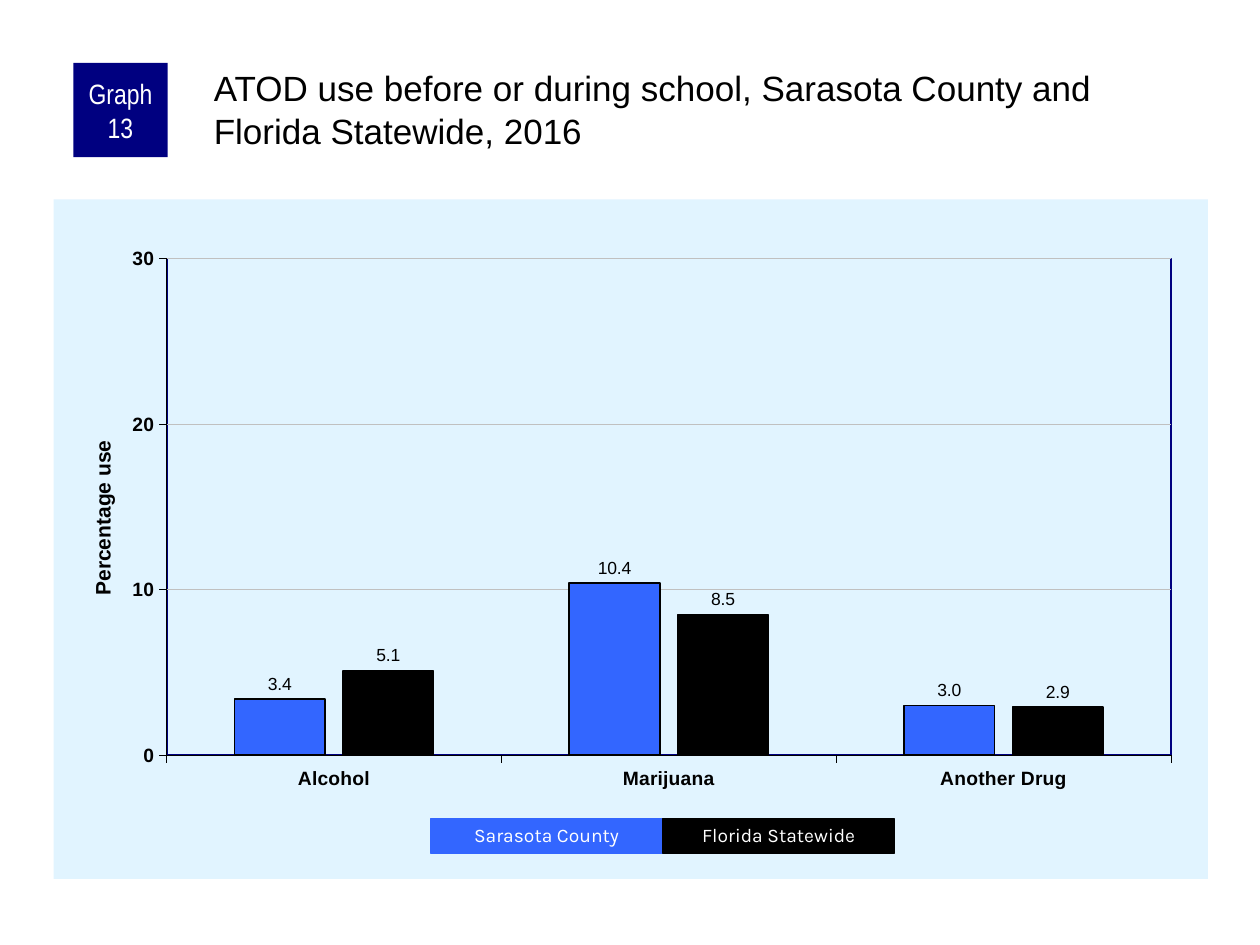
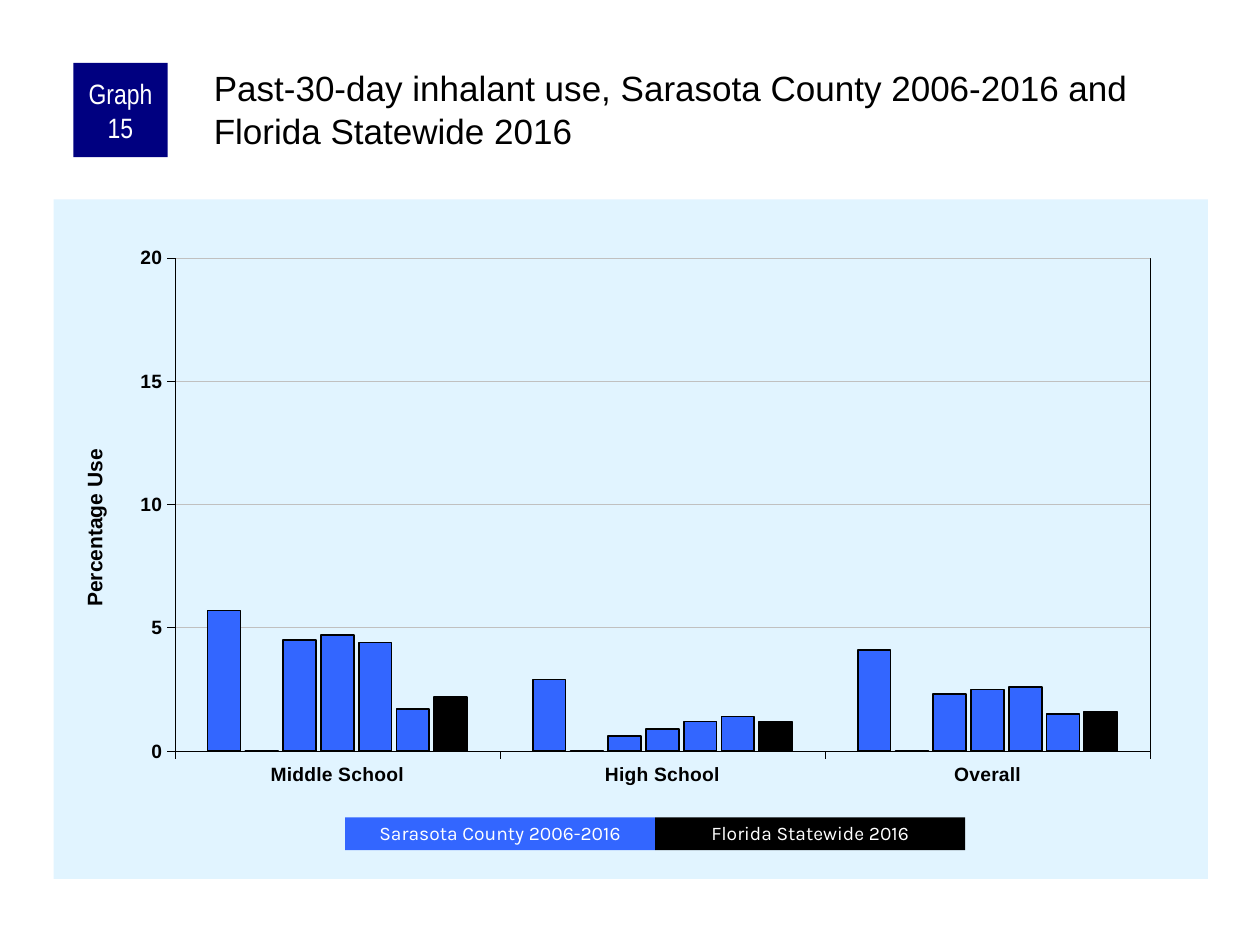
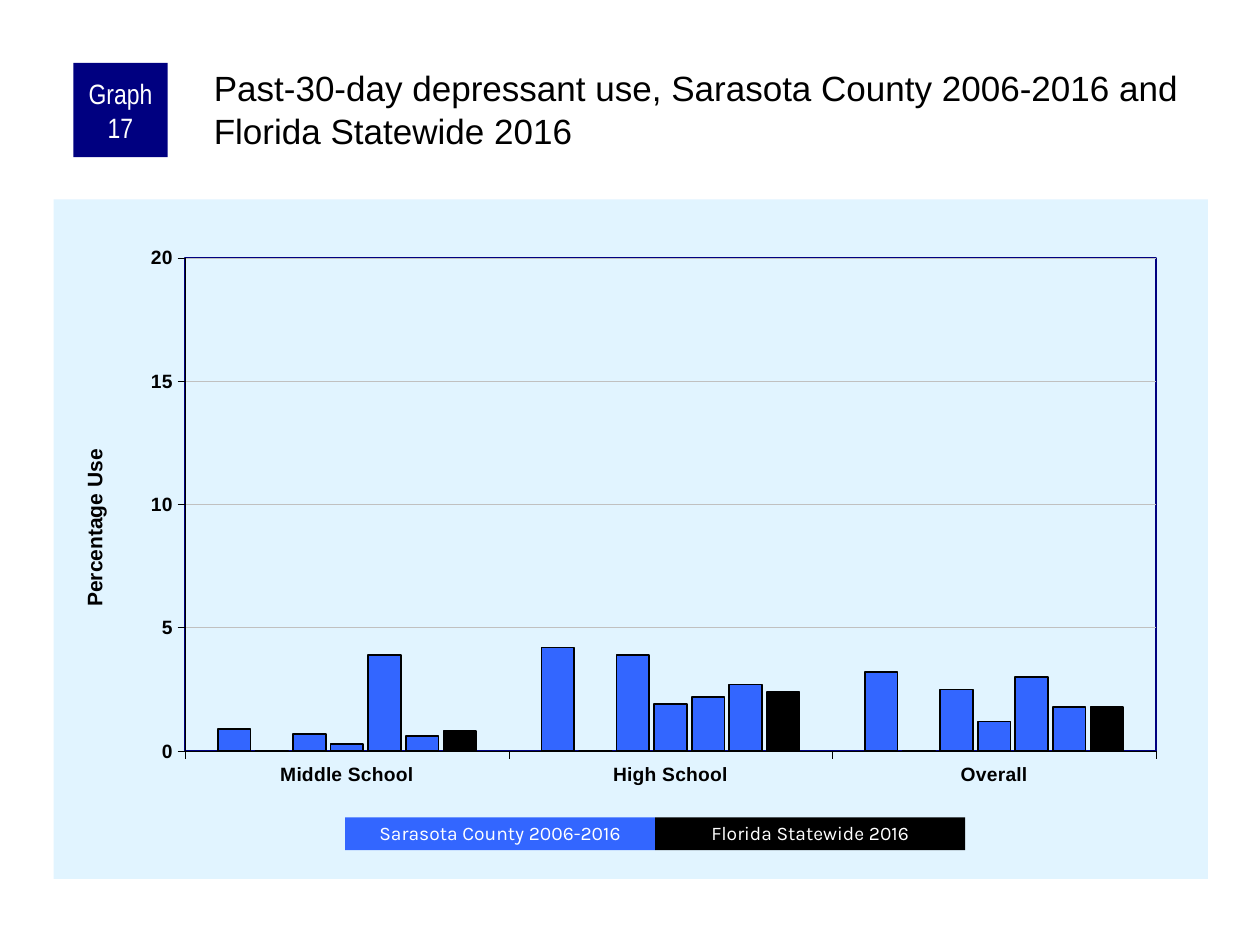
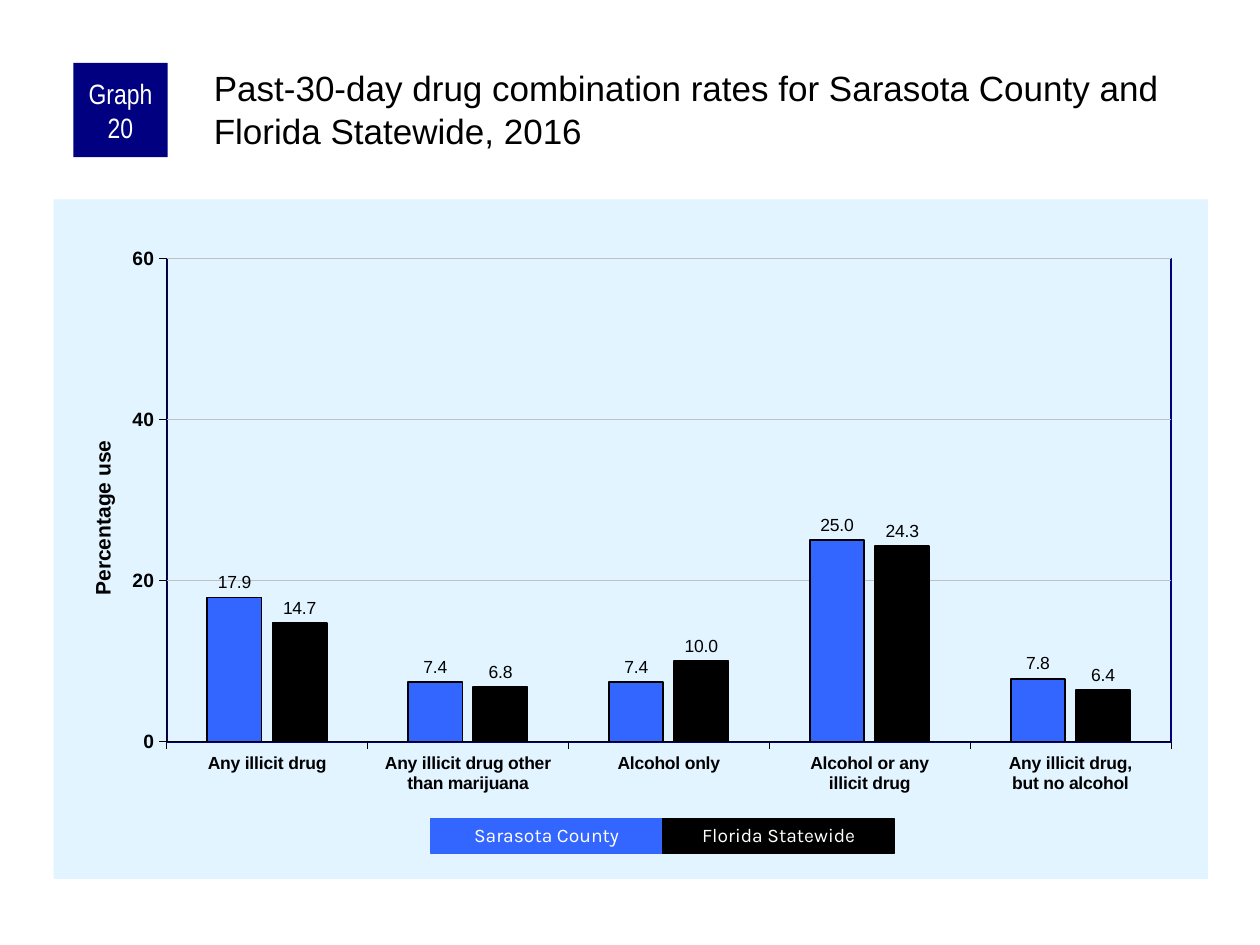
"""Build four county survey slides, each with a badge, a title, a column chart and a key."""
from dataclasses import dataclass

from pptx import Presentation
from pptx.chart.data import CategoryChartData
from pptx.dml.color import RGBColor
from pptx.enum.chart import XL_CHART_TYPE, XL_LABEL_POSITION, XL_TICK_MARK
from pptx.enum.shapes import MSO_SHAPE
from pptx.enum.text import MSO_ANCHOR, MSO_AUTO_SIZE, PP_ALIGN
from pptx.oxml import parse_xml
from pptx.oxml.ns import nsdecls, qn
from pptx.util import Cm, Pt

COLUMNS = XL_CHART_TYPE.COLUMN_CLUSTERED
OUTSIDE_END = XL_LABEL_POSITION.OUTSIDE_END
TICK_OUT = XL_TICK_MARK.OUTSIDE
RECT = MSO_SHAPE.RECTANGLE
TOP, MIDDLE = MSO_ANCHOR.TOP, MSO_ANCHOR.MIDDLE
LEFT, CENTER = PP_ALIGN.LEFT, PP_ALIGN.CENTER
NO_AUTOFIT = MSO_AUTO_SIZE.NONE

BLACK, WHITE, NAVY = "000000", "FFFFFF", "000080"
BLUE, PALE, GREY = "3366FF", "E1F4FF", "C0C0C0"
SANS, NARROW, KEY_FONT = "Arial", "Arial Narrow", "Karla"
TITLE_ONLY = 5


@dataclass(frozen=True)
class Box:
    """A position and size in centimetres."""
    x: float
    y: float
    w: float
    h: float

    def emu(self) -> tuple:
        """Return left, top, width and height as lengths."""
        return Cm(self.x), Cm(self.y), Cm(self.w), Cm(self.h)


@dataclass(frozen=True)
class Style:
    """The look shared by charts of one kind."""
    axis_title: str
    axis_title_at: tuple
    gap: int
    overlap: int
    labels: bool
    key: Box
    key_line: bool


@dataclass(frozen=True)
class GraphSlide:
    """The content of one slide."""
    number: int
    title: str
    style: Style
    categories: tuple
    series: tuple
    key: tuple
    top: int
    step: int
    plot: tuple
    border: str = NAVY
    border_width: float = 1
    category_size: int = 11


CHART = Box(1.08, 4.02, 23.27, 13.7)
BADGE = Box(1.48, 1.27, 1.9, 1.9)
TITLE = Box(4.23, 1.27, 20.11, 2.12)

SINGLE_YEAR = Style("Percentage use", (0.028, 0.349), 150, -20, True,
                    Box(8.68, 16.51, 4.68, 0.69), True)
TREND = Style("Percentage Use", (0.021, 0.362), 200, -15, False,
              Box(6.96, 16.48, 6.25, 0.66), False)

SCHOOLS = ("Middle School", "High School", "Overall")
YEAR_KEY = ("Sarasota County", "Florida Statewide")
TREND_KEY = ("Sarasota County 2006-2016", "Florida Statewide 2016")

SLIDES = (
    GraphSlide(
        13, "ATOD use before or during school, Sarasota County and Florida Statewide, 2016",
        SINGLE_YEAR, ("Alcohol", "Marijuana", "Another Drug"),
        ((3.4, 10.4, 3), (5.1, 8.5, 2.9)),
        YEAR_KEY, 30, 10, (0.098, 0.087, 0.87, 0.731)),
    GraphSlide(
        15, "Past-30-day inhalant use, Sarasota County 2006-2016 and Florida Statewide 2016",
        TREND, SCHOOLS,
        ((5.7, 2.9, 4.1), (0, 0, 0), (4.5, 0.6, 2.3), (4.7, 0.9, 2.5),
         (4.4, 1.2, 2.6), (1.7, 1.4, 1.5), (2.2, 1.2, 1.6)),
        TREND_KEY, 20, 5, (0.105, 0.086, 0.845, 0.726), BLACK, 0.25),
    GraphSlide(
        17, "Past-30-day depressant use, Sarasota County 2006-2016 and Florida Statewide 2016",
        TREND, SCHOOLS,
        ((0.9, 4.2, 3.2), (0, 0, 0), (0.7, 3.9, 2.5), (0.3, 1.9, 1.2),
         (3.9, 2.2, 3), (0.6, 2.7, 1.8), (0.8, 2.4, 1.8)),
        TREND_KEY, 20, 5, (0.114, 0.086, 0.841, 0.726)),
    GraphSlide(
        20, "Past-30-day drug combination rates for Sarasota County and Florida Statewide, 2016",
        SINGLE_YEAR,
        ("Any illicit drug", "Any illicit drug other than marijuana", "Alcohol only",
         "Alcohol or any\nillicit drug", "Any illicit drug,\nbut no alcohol"),
        ((17.9, 7.4, 7.4, 25, 7.8), (14.7, 6.8, 10, 24.3, 6.4)),
        YEAR_KEY, 60, 20, (0.098, 0.087, 0.87, 0.711), category_size=10),
)


def rgb(value: str) -> RGBColor:
    """Turn a hex string into a colour."""
    return RGBColor.from_string(value)


def set_fill(target, color: str) -> None:
    """Give a shape or chart format a solid fill."""
    target.fill.solid()
    target.fill.fore_color.rgb = rgb(color)


def set_line(line, color: str, width: float) -> None:
    """Give a line its colour and width in points."""
    line.color.rgb = rgb(color)
    line.width = Pt(width)


def set_font(font, size: float, color: str = BLACK, name: str = SANS, bold: bool = False) -> None:
    """Format a font."""
    font.size, font.name, font.bold = Pt(size), name, bold
    font.color.rgb = rgb(color)


def write(tf, text: str, *, size: float, color: str = BLACK, name: str = SANS,
          align=CENTER, anchor=MIDDLE, insets: tuple = (0.25, 0.13, 0.25, 0.13),
          spacing: float = 1.0) -> None:
    """Put one formatted paragraph into a text frame."""
    tf.word_wrap, tf.auto_size, tf.vertical_anchor = True, NO_AUTOFIT, anchor
    tf.margin_left, tf.margin_top, tf.margin_right, tf.margin_bottom = map(Cm, insets)
    p = tf.paragraphs[0]
    p.alignment, p.line_spacing = align, spacing
    r = p.add_run()
    r.text = text
    set_font(r.font, size, color, name)


def add_block(s, box: Box, color: str, outlined: bool = False):
    """Draw a filled rectangle and return its text frame."""
    sp = s.shapes.add_shape(RECT, *box.emu())
    sp.shadow.inherit = False
    set_fill(sp, color)
    if outlined:
        set_line(sp.line, color, 0.75)
    else:
        sp.line.fill.background()
    return sp.text_frame


def layout_xml(values: tuple, inner: bool = False):
    """Return a manual chart layout from fractions x, y and optionally w, h."""
    target = '<c:layoutTarget val="inner"/>' if inner else ""
    modes = '<c:xMode val="edge"/><c:yMode val="edge"/>'
    sizes = "".join(f'<c:{tag} val="{v}"/>' for tag, v in zip("xywh", values))
    return parse_xml(f'<c:layout {nsdecls("c")}><c:manualLayout>{target}{modes}{sizes}'
                     '</c:manualLayout></c:layout>')


def drop_layout(element) -> None:
    """Remove the automatic layout of a chart part."""
    for old in element.findall(qn("c:layout")):
        element.remove(old)


def area_xml(fill: str, line: str):
    """Return chart area properties from fill and line markup."""
    return parse_xml(f'<c:spPr {nsdecls("c", "a")}>{fill}{line}</c:spPr>')


def solid_xml(color: str) -> str:
    """Return solid fill markup."""
    return f'<a:solidFill><a:srgbClr val="{color}"/></a:solidFill>'


def format_areas(chart, g: GraphSlide) -> None:
    """Fill the chart, then place and frame its plot area."""
    root = chart.element.find(qn("c:chart"))
    root.addnext(area_xml(solid_xml(PALE), "<a:ln><a:noFill/></a:ln>"))
    plot_area = root.find(qn("c:plotArea"))
    drop_layout(plot_area)
    plot_area.insert(0, layout_xml(g.plot, inner=True))
    frame = f'<a:ln w="{Pt(g.border_width)}">{solid_xml(g.border)}</a:ln>'
    plot_area.append(area_xml("<a:noFill/>", frame))


def format_axes(chart, g: GraphSlide) -> None:
    """Format both axes, the gridlines and the value axis title."""
    axis = chart.value_axis
    for ax, size in ((chart.category_axis, g.category_size), (axis, 11)):
        ax.major_tick_mark = TICK_OUT
        set_font(ax.tick_labels.font, size, bold=True)
        set_line(ax.format.line, BLACK, 0.25)
    axis.minimum_scale, axis.maximum_scale, axis.major_unit = 0, g.top, g.step
    set_line(axis.major_gridlines.format.line, GREY, 0.25)
    axis.tick_labels.number_format = "0"
    axis.tick_labels.number_format_is_linked = False
    title = axis.axis_title
    p = title.text_frame.paragraphs[0]
    r = p.add_run()
    r.text = g.style.axis_title
    set_font(r.font, 12, bold=True)
    element = title.element
    element.find(".//" + qn("a:bodyPr")).set("rot", "-5400000")
    drop_layout(element)
    element.find(qn("c:tx")).addnext(layout_xml(g.style.axis_title_at))


def format_series(plot, g: GraphSlide) -> None:
    """Colour the county columns blue and the last, statewide, series black."""
    plot.vary_by_categories = False
    plot.gap_width, plot.overlap = g.style.gap, g.style.overlap
    last = len(g.series) - 1
    for i, series in enumerate(plot.series):
        series.invert_if_negative = False
        set_fill(series.format, BLACK if i == last else BLUE)
        set_line(series.format.line, BLACK, 1)
        if g.style.labels:
            labels = series.data_labels
            labels.show_value = True
            labels.number_format, labels.number_format_is_linked = "0.0", False
            labels.position = OUTSIDE_END
            set_font(labels.font, 10)


def add_graph(s, g: GraphSlide) -> None:
    """Add the column chart of a slide."""
    data = CategoryChartData()
    data.categories = g.categories
    for i, values in enumerate(g.series, 1):
        data.add_series(f"Series {i}", values)
    chart = s.shapes.add_chart(COLUMNS, *CHART.emu(), data).chart
    chart.has_title = chart.has_legend = False
    set_font(chart.font, 11)
    format_series(chart.plots[0], g)
    format_axes(chart, g)
    format_areas(chart, g)


def add_key(s, g: GraphSlide) -> None:
    """Draw the two key blocks side by side."""
    box = g.style.key
    for i, (text, color) in enumerate(zip(g.key, (BLUE, BLACK))):
        tf = add_block(s, Box(box.x + i * box.w, box.y, box.w, box.h), color, g.style.key_line)
        write(tf, text, size=11, color=WHITE, name=KEY_FONT, spacing=0.9)


def add_slide(prs, g: GraphSlide) -> None:
    """Build one complete slide."""
    s = prs.slides.add_slide(prs.slide_layouts[TITLE_ONLY])
    title = s.shapes.title
    title.left, title.top, title.width, title.height = TITLE.emu()
    write(title.text_frame, g.title, size=20, align=LEFT, anchor=TOP, insets=(0.08, 0.08, 0, 0))
    add_graph(s, g)
    write(add_block(s, BADGE, NAVY), f"Graph {g.number}", size=16, color=WHITE, name=NARROW,
          insets=(0.13, 0, 0.13, 0))
    add_key(s, g)


def main() -> None:
    """Build and save the presentation."""
    prs = Presentation()
    prs.slide_width, prs.slide_height = Cm(25.4), Cm(19.05)
    for g in SLIDES:
        add_slide(prs, g)
    prs.save("out.pptx")


if __name__ == "__main__":
    main()
